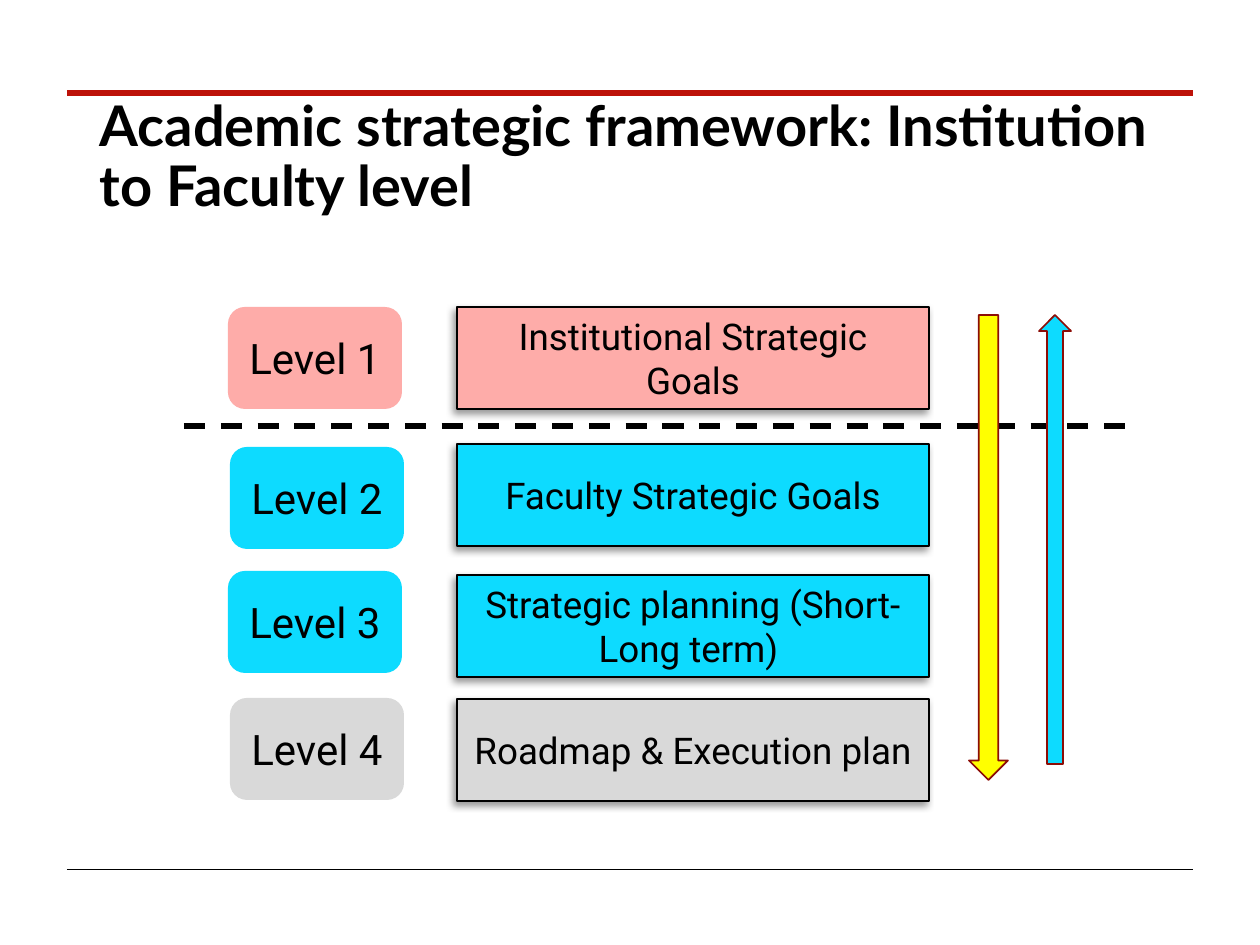
from dataclasses import dataclass

from lxml import etree
from pptx import Presentation
from pptx.dml.color import RGBColor
from pptx.enum.dml import MSO_LINE
from pptx.enum.shapes import MSO_CONNECTOR, MSO_SHAPE
from pptx.enum.text import MSO_ANCHOR, MSO_AUTO_SIZE, PP_ALIGN
from pptx.oxml import parse_xml
from pptx.oxml.ns import nsdecls, qn
from pptx.util import Emu, Pt

EMU_PER_PX = 914400 / 126
TITLE_ONLY = 5
STRAIGHT = MSO_CONNECTOR.STRAIGHT
DASH = MSO_LINE.DASH
RECT, ROUNDED = MSO_SHAPE.RECTANGLE, MSO_SHAPE.ROUNDED_RECTANGLE
DOWN, UP = MSO_SHAPE.DOWN_ARROW, MSO_SHAPE.UP_ARROW
MIDDLE, NO_FIT = MSO_ANCHOR.MIDDLE, MSO_AUTO_SIZE.NONE
LEFT, CENTER = PP_ALIGN.LEFT, PP_ALIGN.CENTER


@dataclass(frozen=True)
class Theme:
    """Colours, fonts and type sizes of the slide."""
    black: str = "000000"
    red: str = "BD1209"
    dark_red: str = "8C0D07"
    pink: str = "FEACA9"
    cyan: str = "0DDBFF"
    grey: str = "D9D9D9"
    yellow: str = "FFFF00"
    title_font: str = "Lato"
    body_font: str = "Roboto"
    title_size: int = 32
    level_size: int = 24
    goal_size: int = 21


THEME = Theme()
BADGE_SIZE = (174, 102)
GOAL_LEFT, GOAL_SIZE = 457, (472, 102)
LEVELS = [
    ("Level 1", 228, 307, "Institutional Strategic Goals", 307, THEME.pink),
    ("Level 2", 230, 447, "Faculty Strategic Goals", 444, THEME.cyan),
    ("Level 3", 228, 571, "Strategic planning (Short-Long term) ", 575, THEME.cyan),
    ("Level 4", 230, 698, "Roadmap & Execution plan", 699, THEME.grey),
]


def px(length):
    """Turn pixels into EMU."""
    return Emu(round(length * EMU_PER_PX))


def set_all(target, values):
    """Set each attribute named in a dict."""
    for name, value in values.items():
        setattr(target, name, value)


def write(shape, text, font, size, align, bold=False, spacing=None):
    """Put one formatted paragraph into a shape."""
    frame = shape.text_frame
    set_all(frame, {"word_wrap": True, "auto_size": NO_FIT, "vertical_anchor": MIDDLE})
    para = frame.paragraphs[0]
    set_all(para, {"alignment": align, "line_spacing": spacing})
    span = para.add_run()
    span.text = text
    set_all(span.font, {"name": font, "size": Pt(size), "bold": bold})
    span.font.color.rgb = RGBColor.from_string(THEME.black)


def add_title(page, text):
    """Place and fill the title placeholder."""
    title = page.shapes.title
    set_all(title, {"left": px(87), "top": px(67), "width": px(1086), "height": px(183)})
    write(title, text, THEME.title_font, THEME.title_size, LEFT, True, 0.9)


def add_rule(page, left, right, y, color, weight, dash=None):
    """Draw a horizontal line."""
    rule = page.shapes.add_connector(STRAIGHT, px(left), px(y), px(right), px(y))
    rule.line.color.rgb = RGBColor.from_string(color)
    set_all(rule.line, {"width": Pt(weight), "dash_style": dash})
    etree.SubElement(rule._element.spPr, qn("a:effectLst"))


def add_block(page, kind, left, top, size, fill, outline=None):
    """Draw a filled preset shape without shadow."""
    block = page.shapes.add_shape(kind, px(left), px(top), *map(px, size))
    block.shadow.inherit = False
    block.fill.solid()
    block.fill.fore_color.rgb = RGBColor.from_string(fill)
    if outline:
        block.line.color.rgb = RGBColor.from_string(outline)
        block.line.width = Pt(1)
    else:
        block.line.fill.background()
    return block


def add_shadow(block):
    """Give a block a soft shadow to its lower left."""
    effects = block._element.spPr.find(qn("a:effectLst"))
    effects.append(parse_xml(
        f'<a:outerShdw {nsdecls("a")} blurRad="{Pt(4)}" dist="{Pt(3)}" '
        f'dir="{135 * 60000}" algn="tr" rotWithShape="0">'
        f'<a:srgbClr val="{THEME.black}"><a:alpha val="40000"/></a:srgbClr>'
        '</a:outerShdw>'))


def add_level(page, label, badge_left, badge_top, goal, goal_top, fill):
    """Draw a level badge and its goal box."""
    badge = add_block(page, ROUNDED, badge_left, badge_top, BADGE_SIZE, fill)
    write(badge, label, THEME.body_font, THEME.level_size, CENTER)
    box = add_block(page, RECT, GOAL_LEFT, goal_top, GOAL_SIZE, fill, THEME.black)
    add_shadow(box)
    write(box, goal, THEME.body_font, THEME.goal_size, CENTER)


def main():
    """Build and save the slide."""
    deck = Presentation()
    set_all(deck, {"slide_width": px(1260), "slide_height": px(945)})
    page = deck.slides.add_slide(deck.slide_layouts[TITLE_ONLY])
    add_rule(page, 67, 1193, 93, THEME.red, 3)
    add_rule(page, 67, 1193, 869, THEME.black, 0.5)
    add_title(page, "Academic strategic framework: Institution to Faculty level")
    for level in LEVELS:
        add_level(page, *level)
    add_rule(page, 184, 1129, 426, THEME.black, 3, DASH)
    add_block(page, DOWN, 969, 315, (39, 465), THEME.yellow, THEME.dark_red)
    add_block(page, UP, 1039, 315, (32, 449), THEME.cyan, THEME.dark_red)
    deck.save("out.pptx")


if __name__ == "__main__":
    main()
